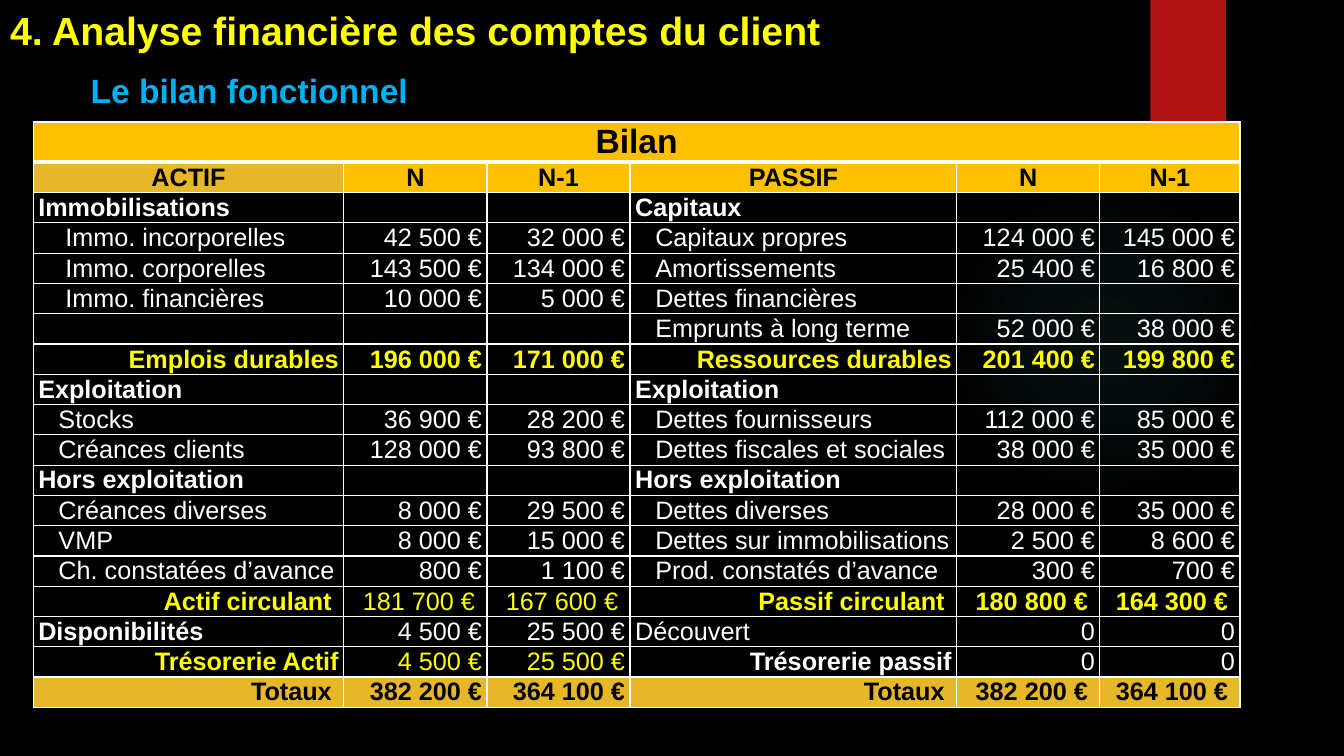
from dataclasses import dataclass, replace
from typing import Optional

from lxml import etree
from pptx import Presentation
from pptx.dml.color import RGBColor
from pptx.enum.shapes import MSO_SHAPE
from pptx.enum.text import MSO_ANCHOR, PP_ALIGN
from pptx.oxml import parse_xml
from pptx.oxml.ns import qn
from pptx.slide import Slide
from pptx.table import Table, _Cell
from pptx.text.text import TextFrame
from pptx.util import Inches, Pt

LEFT, CENTER, RIGHT, JUSTIFY = PP_ALIGN.LEFT, PP_ALIGN.CENTER, PP_ALIGN.RIGHT, PP_ALIGN.JUSTIFY
MIDDLE, BOTTOM = MSO_ANCHOR.MIDDLE, MSO_ANCHOR.BOTTOM
OVAL, RECTANGLE = MSO_SHAPE.OVAL, MSO_SHAPE.RECTANGLE

BLACK = RGBColor(0x00, 0x00, 0x00)
WHITE = RGBColor(0xFF, 0xFF, 0xFF)
YELLOW = RGBColor(0xFF, 0xFF, 0x00)
BLUE = RGBColor(0x00, 0xB0, 0xF0)
RED = RGBColor(0xB0, 0x15, 0x13)
TEAL = RGBColor(0x50, 0xB9, 0xC1)
AMBER = RGBColor(0xFF, 0xC0, 0x00)
GOLD = RGBColor(0xE6, 0xB7, 0x29)

DRAWING_NS = "http://schemas.openxmlformats.org/drawingml/2006/main"
COLUMN_WIDTHS = (3.08, 1.42, 1.42, 3.24, 1.42, 1.39)
TITLE_ROW_HEIGHT, ROW_HEIGHT = 0.4, 0.3


@dataclass(frozen=True)
class Style:
    color: RGBColor = WHITE
    bold: bool = False
    align: PP_ALIGN = LEFT
    indent: float = 0
    anchor: MSO_ANCHOR = MIDDLE
    fill: Optional[RGBColor] = None
    size: int = 18


PLAIN = Style()
ITEM = Style(indent=0.2)
SECTION = Style(bold=True)
SUBTOTAL = Style(YELLOW, True, RIGHT)
DURABLE = replace(SUBTOTAL, anchor=BOTTOM)
YELLOW_PLAIN = Style(YELLOW)
WHITE_SUBTOTAL = Style(bold=True, align=RIGHT)
TOTAL = Style(BLACK, True, RIGHT, fill=GOLD)
HEADER = Style(BLACK, True, CENTER, fill=AMBER)
GOLD_HEADER = replace(HEADER, fill=GOLD)
BANNER = replace(HEADER, size=24)


@dataclass(frozen=True)
class Entry:
    label: str
    current: str = ""
    previous: str = ""
    style: Style = ITEM
    amount_style: Optional[Style] = None


ASSETS = (
    Entry("ACTIF", "N", "N-1", GOLD_HEADER, HEADER),
    Entry("Immobilisations", style=SECTION),
    Entry(" Immo. incorporelles", "42 500 €", "32 000 €"),
    Entry(" Immo. corporelles", "143 500 €", "134 000 €"),
    Entry(" Immo. financières", "10 000 €", "5 000 €"),
    Entry(""),
    Entry("Emplois durables", "196 000 €", "171 000 €", DURABLE),
    Entry("Exploitation", style=SECTION),
    Entry("Stocks", "36 900 €", "28 200 €"),
    Entry("Créances clients", "128 000 €", "93 800 €"),
    Entry("Hors exploitation", style=SECTION),
    Entry("Créances diverses", "8 000 €", "29 500 €"),
    Entry("VMP", "8 000 €", "15 000 €"),
    Entry("Ch. constatées d’avance", "800 €", "1 100 €"),
    Entry("Actif circulant ", " 181 700 € ", " 167 600 € ", SUBTOTAL, YELLOW_PLAIN),
    Entry("Disponibilités", "4 500 €", "25 500 €", SECTION, PLAIN),
    Entry("Trésorerie Actif", "4 500 €", "25 500 €", SUBTOTAL, YELLOW_PLAIN),
    Entry("Totaux ", "382 200 €", "364 100 €", TOTAL),
)
LIABILITIES = (
    Entry("PASSIF", "N", "N-1", HEADER),
    Entry("Capitaux", style=SECTION),
    Entry("Capitaux propres", "124 000 €", "145 000 €"),
    Entry("Amortissements", "25 400 €", "16 800 €"),
    Entry("Dettes financières"),
    Entry("Emprunts à long terme", "52 000 €", "38 000 €"),
    Entry("Ressources durables", "201 400 €", "199 800 €", DURABLE),
    Entry("Exploitation", style=SECTION),
    Entry("Dettes fournisseurs", "112 000 €", "85 000 €"),
    Entry("Dettes fiscales et sociales", "38 000 €", "35 000 €"),
    Entry("Hors exploitation", style=SECTION),
    Entry("Dettes diverses", "28 000 €", "35 000 €"),
    Entry("Dettes sur immobilisations", "2 500 €", "8 600 €"),
    Entry("Prod. constatés d’avance", "300 €", "700 €"),
    Entry("Passif circulant ", " 180 800 € ", " 164 300 € ", SUBTOTAL),
    Entry("Découvert", "0", "0", PLAIN),
    Entry("Trésorerie passif", "0", "0", WHITE_SUBTOTAL, PLAIN),
    Entry("Totaux ", " 382 200 € ", " 364 100 € ", TOTAL),
)


def write_text(frame: TextFrame, text: str, style: Style) -> None:
    frame.text = text
    paragraph = frame.paragraphs[0]
    paragraph.alignment = style.align
    if style.indent:
        paragraph._p.get_or_add_pPr().set("marL", str(Inches(style.indent)))
    font = paragraph.runs[0].font if text else paragraph.font
    font.name, font.size, font.bold = "Arial", Pt(style.size), style.bold
    font.color.rgb = style.color


def format_cell(cell: _Cell, text: str, style: Style, top: int = 1, bottom: int = 1) -> None:
    cell.margin_left = cell.margin_right = Inches(0.05)
    cell.margin_top = cell.margin_bottom = 0
    cell.vertical_anchor = style.anchor
    properties = cell._tc.get_or_add_tcPr()
    for side, width in (("lnL", 1), ("lnR", 1), ("lnT", top), ("lnB", bottom)):
        border = etree.SubElement(properties, qn(f"a:{side}"), w=str(Pt(width)))
        paint = etree.SubElement(border, qn("a:solidFill"))
        etree.SubElement(paint, qn("a:srgbClr"), val=str(WHITE))
    if style.fill is None:
        cell.fill.background()
    else:
        cell.fill.solid()
        cell.fill.fore_color.rgb = style.fill
    write_text(cell.text_frame, text, style)


def fill_side(table: Table, entries: tuple[Entry, ...], first_column: int) -> None:
    for row, entry in enumerate(entries, start=1):
        amount_style = entry.amount_style or entry.style
        amount_align = CENTER if row == 1 else RIGHT
        amount_style = replace(amount_style, align=amount_align, indent=0)
        top = 3 if row == 1 else 1
        format_cell(table.cell(row, first_column), entry.label, entry.style, top)
        for offset, amount in enumerate((entry.current, entry.previous), start=1):
            format_cell(table.cell(row, first_column + offset), amount, amount_style, top)


def add_balance_sheet(slide: Slide) -> None:
    row_count = len(ASSETS) + 1
    height = TITLE_ROW_HEIGHT + ROW_HEIGHT * len(ASSETS)
    table = slide.shapes.add_table(
        row_count, len(COLUMN_WIDTHS), Inches(0.33), Inches(1.21),
        Inches(sum(COLUMN_WIDTHS)), Inches(height),
    ).table
    table.first_row = table.horz_banding = False
    for column, width in zip(table.columns, COLUMN_WIDTHS):
        column.width = Inches(width)
    for index, row in enumerate(table.rows):
        row.height = Inches(ROW_HEIGHT if index else TITLE_ROW_HEIGHT)
    for column in range(len(COLUMN_WIDTHS)):
        format_cell(table.cell(0, column), "" if column else "Bilan", BANNER, bottom=3)
    table.cell(0, 0).merge(table.cell(0, len(COLUMN_WIDTHS) - 1))
    fill_side(table, ASSETS, 0)
    fill_side(table, LIABILITIES, 3)


def add_decor(slide: Slide) -> None:
    glow = slide.shapes.add_shape(OVAL, Inches(9.41), Inches(1.83), Inches(3.08), Inches(3.08))
    ribbon = slide.shapes.add_shape(RECTANGLE, Inches(11.41), 0, Inches(0.75), Inches(1.25))
    for shape in (glow, ribbon):
        shape.shadow.inherit = False
        shape.line.fill.background()
    ribbon.fill.solid()
    ribbon.fill.fore_color.rgb = RED
    glow.fill.background()
    stops = "".join(
        f'<a:gs pos="{position * 1000}"><a:srgbClr val="{TEAL}">'
        f'<a:alpha val="{opacity * 1000}"/></a:srgbClr></a:gs>'
        for position, opacity in ((0, 7), (36, 6), (69, 0))
    )
    gradient = parse_xml(
        f'<a:gradFill xmlns:a="{DRAWING_NS}"><a:gsLst>{stops}</a:gsLst><a:path path="circle">'
        '<a:fillToRect l="50000" t="50000" r="50000" b="50000"/></a:path></a:gradFill>'
    )
    properties = glow._element.spPr
    properties.replace(properties.find(qn("a:noFill")), gradient)


def add_headings(slide: Slide) -> None:
    title = slide.shapes.title
    title.left, title.top, title.width, title.height = 0, 0, Inches(11.48), Inches(0.6)
    title.text_frame.vertical_anchor = MIDDLE
    write_text(title.text_frame, "4. Analyse financière des comptes du client", Style(YELLOW, True, size=28))

    subtitle = slide.shapes.add_textbox(Inches(0.42), Inches(0.64), Inches(3.75), Inches(0.5))
    properties = subtitle.text_frame.paragraphs[0]._p.get_or_add_pPr()
    properties.set("indent", str(-Inches(0.38)))
    etree.SubElement(properties, qn("a:buFont"), typeface="Arial")
    etree.SubElement(properties, qn("a:buChar"), char="•")
    write_text(subtitle.text_frame, "Le bilan fonctionnel", Style(BLUE, True, JUSTIFY, 0.38, size=24))
    subtitle.text_frame.paragraphs[0].space_after = Pt(6)


def main() -> None:
    presentation = Presentation()
    presentation.slide_width, presentation.slide_height = Inches(13.33), Inches(7.5)
    slide = presentation.slides.add_slide(presentation.slide_layouts[5])
    slide.background.fill.solid()
    slide.background.fill.fore_color.rgb = BLACK
    add_decor(slide)
    add_headings(slide)
    add_balance_sheet(slide)
    presentation.save("out.pptx")


if __name__ == "__main__":
    main()
